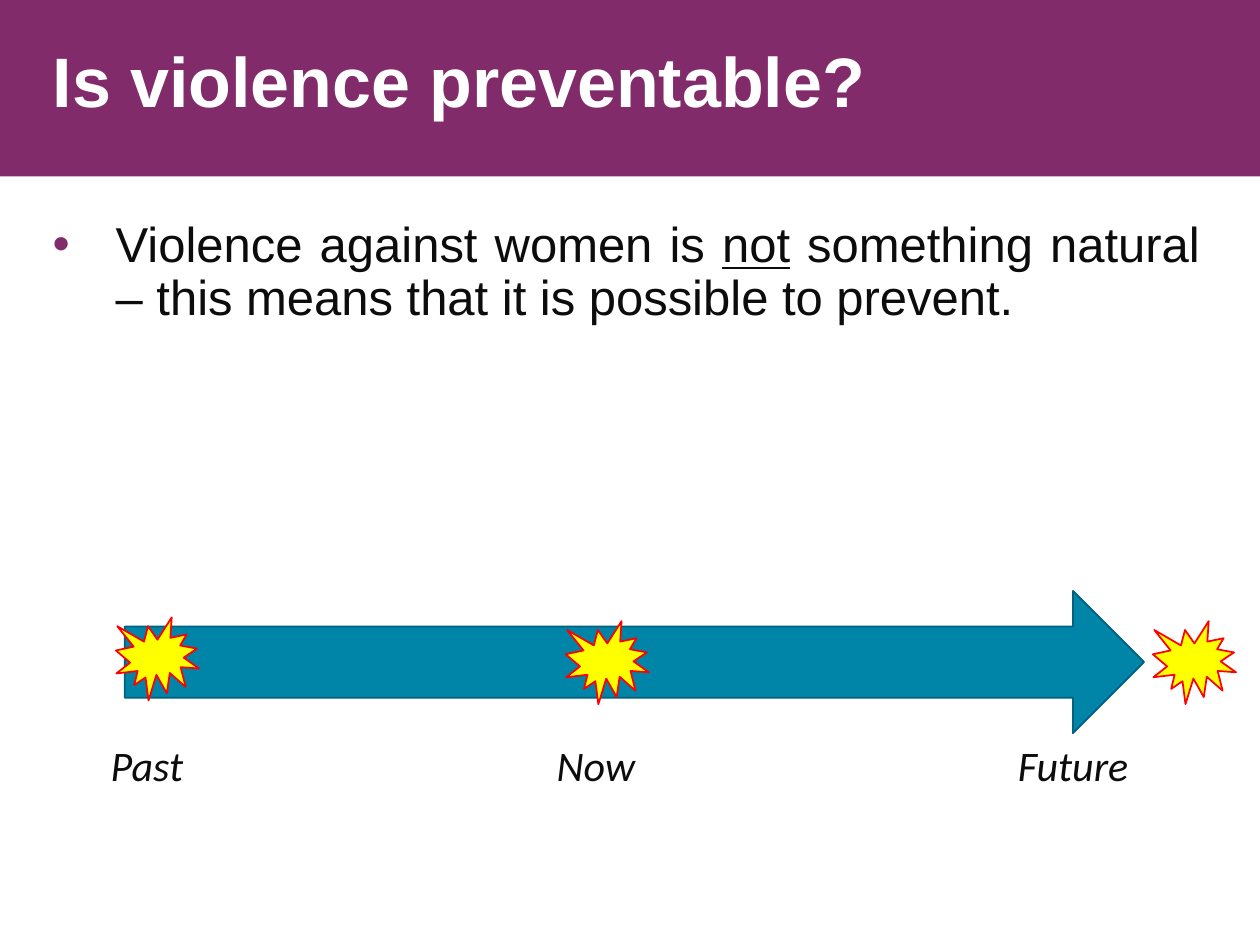
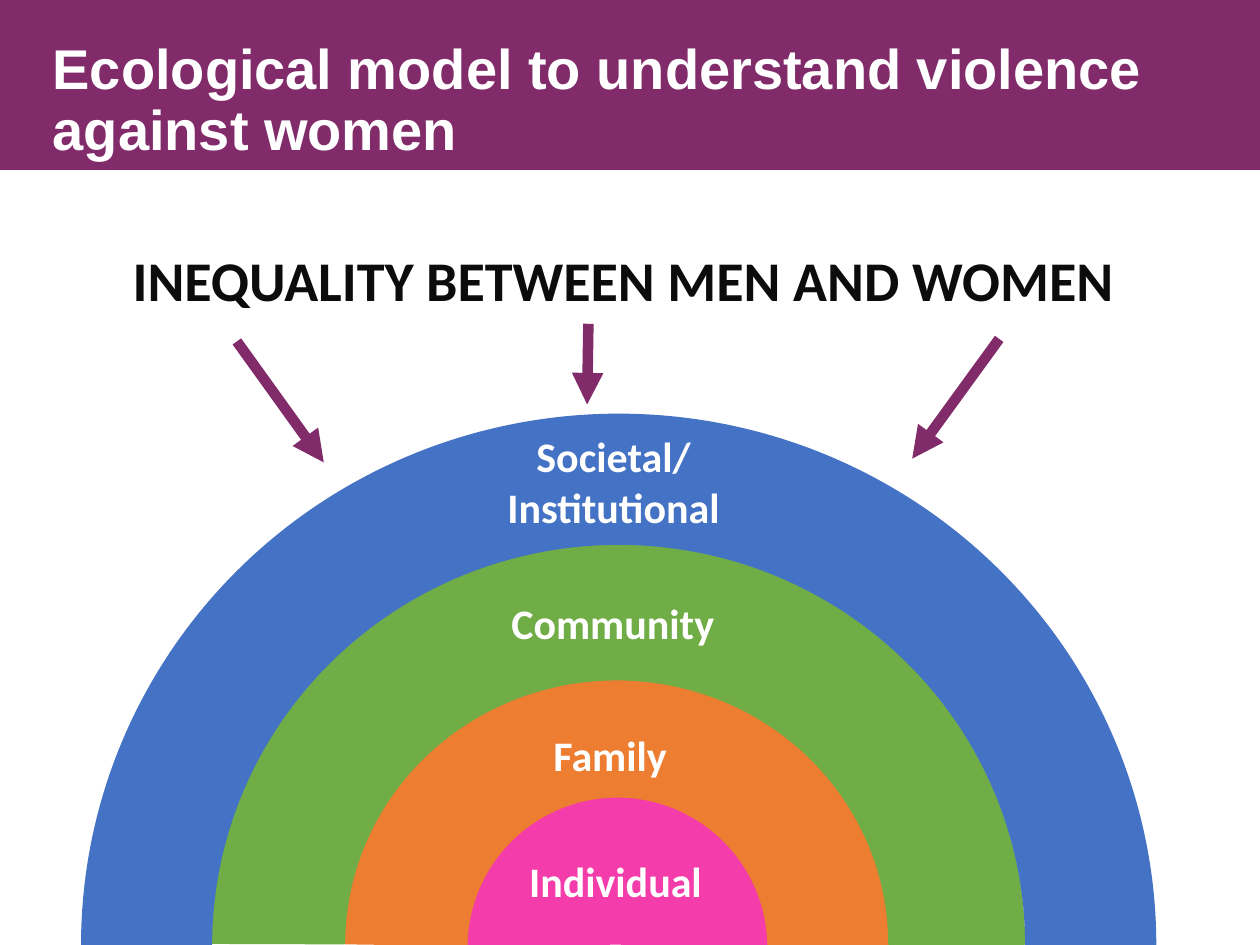
from lxml import etree
from pptx import Presentation, util as u
from pptx.dml.color import RGBColor
from pptx.enum import shapes, text
from pptx.oxml import ns

PURPLE, WHITE, INK = "822B6A", "FFFFFF", "0C0C0C"
SHAPE, ALIGN = shapes.MSO_SHAPE, text.PP_ALIGN


def colour(hex_code):
    return RGBColor.from_string(hex_code)


def inches(*lengths):
    return [u.Inches(length) for length in lengths]


def add_shape(page, kind, box, fill, line=None, adjustments=()):
    shape = page.shapes.add_shape(kind, *inches(*box))
    shape.shadow.inherit = False
    shape.fill.solid()
    shape.fill.fore_color.rgb = colour(fill)
    if line:
        shape.line.color.rgb = colour(line)
        shape.line.width = u.Pt(1)
    else:
        shape.line.fill.background()
    for index, value in enumerate(adjustments):
        shape.adjustments[index] = value
    return shape


def style(span, size, name="Calibri", ink=INK, bold=False, italic=False):
    font = span.font
    font.size, font.name, font.bold, font.italic = u.Pt(size), name, bold, italic
    font.color.rgb = colour(ink)


def fill_text(frame, words, align=ALIGN.LEFT, spacing=None, wrap=True, **look):
    """Put one paragraph per line of words into a top-anchored frame."""
    frame.word_wrap = wrap
    frame.vertical_anchor = text.MSO_ANCHOR.TOP
    frame.text = words
    for para in frame.paragraphs:
        para.alignment = align
        if spacing:
            para.line_spacing = spacing
        for span in para.runs:
            style(span, **look)


def add_text(page, box, words, **options):
    fill_text(page.shapes.add_textbox(*inches(*box)).text_frame, words, **options)


def add_title_band(page, title, top, size, spacing):
    add_shape(page, SHAPE.RECTANGLE, (0, 0, 10, 1.4), PURPLE)
    add_text(page, (0.32, top, 9.3, 0.68), title, spacing=spacing,
             size=size, name="Arial", ink=WHITE, bold=True)


def add_bullet(page, box, spans):
    """Add a justified bullet from (words, underlined) pairs."""
    frame = page.shapes.add_textbox(*inches(*box)).text_frame
    frame.word_wrap = True
    para = frame.paragraphs[0]
    para.alignment = ALIGN.JUSTIFY
    para.line_spacing = 0.9
    settings = para._p.get_or_add_pPr()
    settings.set("marL", str(u.Inches(0.5)))
    settings.set("indent", str(u.Inches(-0.5)))
    bullet_colour = etree.SubElement(settings, ns.qn("a:buClr"))
    etree.SubElement(bullet_colour, ns.qn("a:srgbClr"), val=PURPLE)
    etree.SubElement(settings, ns.qn("a:buFont"), typeface="Arial")
    etree.SubElement(settings, ns.qn("a:buChar"), char="•")
    for words, underlined in spans:
        span = para.add_run()
        span.text = words
        style(span, 28, "Arial")
        span.font.underline = underlined


def add_timeline(page, left, top):
    """Draw the time arrow with its bursts and labels from its top left corner."""
    add_shape(page, SHAPE.RIGHT_ARROW, (left, top, 8.09, 1.13), "0084A8", "00627C")
    moments = [("Past", -0.21, 0.78, -0.07, 0.21),
               ("Now", 3.33, 0.83, 3.5, 0.24),
               ("Future", 6.99, 1.09, 8.16, 0.24)]
    for label, label_left, width, burst_left, burst_top in moments:
        add_shape(page, SHAPE.EXPLOSION1,
                  (left + burst_left, top + burst_top, 0.66, 0.66), "FFFF00", "FF0000")
        add_text(page, (left + label_left, top + 1.13, width, 0.5), label,
                 wrap=False, size=24, italic=True)


def add_heading_panel(page, box, words):
    panel = add_shape(page, SHAPE.RECTANGLE, box, WHITE, WHITE)
    panel.text_frame.margin_top = u.Inches(0.59)
    fill_text(panel.text_frame, words, align=ALIGN.CENTER, size=32, bold=True)


def add_rings(page, left, top):
    """Draw the half rings and their labels from the outer ring's top left corner."""
    core = add_shape(page, SHAPE.PIE, (left + 2.99, top + 2.97, 2.46, 2.46),
                     "F43CAA", "F43CAA", (214.9, 108.56))
    core.rotation = 180
    rings = [((2.09, 2.07, 4.32, 4.32), "ED7D31", (108.51, 0.02, 0.223)),
             ((1.01, 1.03, 6.47, 6.35), "70AD47", (108.11, 215.96, 0.169)),
             ((0, 0, 8.52, 8.42), "4472C4", (108.04, 215.97, 0.122))]
    for (x, y, width, height), fill, adjustments in rings:
        add_shape(page, SHAPE.BLOCK_ARC, (left + x, top + y, width, height),
                  fill, fill, adjustments)
    labels = [("Individual", 3.14, 3.45, 2.19, 0.5, ALIGN.CENTER),
              ("Family ", 3.24, 2.45, 1.98, 0.5, ALIGN.CENTER),
              ("Community", 3.31, 1.4, 2.03, 0.5, ALIGN.LEFT),
              ("Societal/\nInstitutional", 3.09, 0.08, 2.26, 0.91, ALIGN.CENTER)]
    for words, x, y, width, height, align in labels:
        add_text(page, (left + x, top + y, width, height), words, align=align,
                 size=24, ink=WHITE, bold=True)


def add_arrow(page, start, end):
    arrow = page.shapes.add_connector(shapes.MSO_CONNECTOR.STRAIGHT,
                                      *inches(*start, *end))
    arrow.line.color.rgb = colour(PURPLE)
    arrow.line.width = u.Pt(6)
    etree.SubElement(arrow.line._get_or_add_ln(), ns.qn("a:tailEnd"), type="triangle")
    etree.SubElement(arrow._element.spPr, ns.qn("a:effectLst"))


def build_prevention_slide(page):
    add_title_band(page, "Is violence preventable?", 0.38, 40, 0.8)
    add_timeline(page, 0.99, 4.69)
    add_bullet(page, (0.32, 1.7, 9.3, 1.37), [
        ("Violence against women is ", False),
        ("not", True),
        (" something natural – this means that it is possible to prevent.", False)])


def build_model_slide(page):
    add_title_band(page, "Ecological model to understand violence against women",
                   0.28, 32, 0.9)
    add_heading_panel(page, (0, 1.36, 10, 6.14), "INEQUALITY BETWEEN MEN AND WOMEN ")
    add_rings(page, 0.65, 3.29)
    for start, end in [((1.88, 2.71), (2.57, 3.67)),
                       ((4.67, 2.57), (4.66, 3.21)),
                       ((7.93, 2.69), (7.24, 3.64))]:
        add_arrow(page, start, end)


def main():
    deck = Presentation()
    deck.slide_width, deck.slide_height = inches(10, 7.5)
    for build in (build_prevention_slide, build_model_slide):
        build(deck.slides.add_slide(deck.slide_layouts[6]))
    deck.save("out.pptx")


if __name__ == "__main__":
    main()
